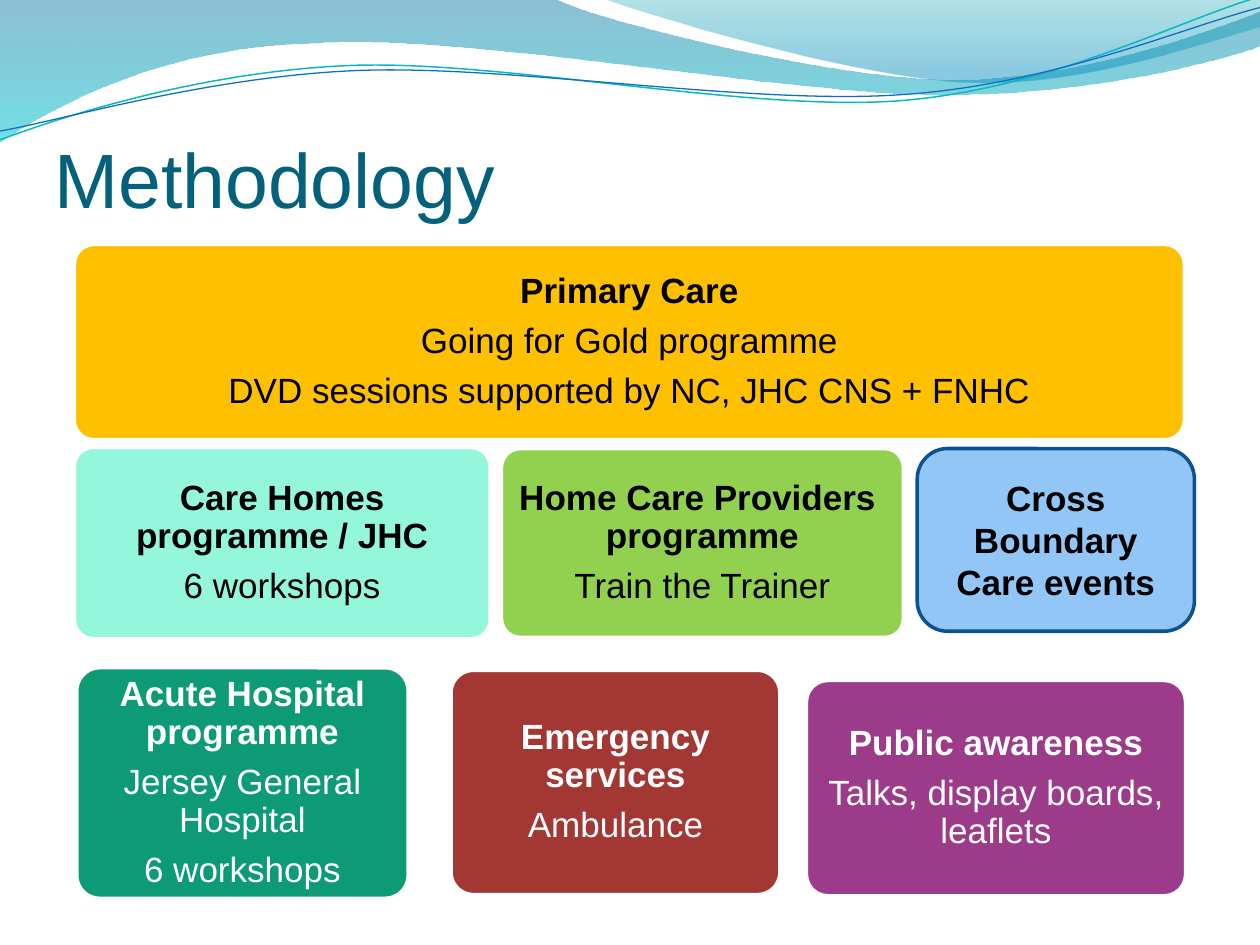
from math import cos, radians, sin

from lxml import etree
from pptx import Presentation
from pptx.dml.color import RGBColor
from pptx.enum.shapes import MSO_SHAPE
from pptx.enum.text import MSO_ANCHOR, PP_ALIGN
from pptx.oxml.ns import qn
from pptx.util import Inches, Pt

ROUNDED = MSO_SHAPE.ROUNDED_RECTANGLE
MIDDLE, BOTTOM = MSO_ANCHOR.MIDDLE, MSO_ANCHOR.BOTTOM
LEFT, CENTER = PP_ALIGN.LEFT, PP_ALIGN.CENTER

BLACK = RGBColor(0x00, 0x00, 0x00)
WHITE = RGBColor(0xFF, 0xFF, 0xFF)
TITLE_TEAL = RGBColor(0x04, 0x61, 0x7B)
GOLD = RGBColor(0xFF, 0xC0, 0x00)
MINT = RGBColor(0x94, 0xF7, 0xDC)
LIME = RGBColor(0x92, 0xD0, 0x50)
GREEN = RGBColor(0x0C, 0x9B, 0x74)
RED = RGBColor(0xA2, 0x37, 0x34)
PURPLE = RGBColor(0x9B, 0x3B, 0x89)
SKY = RGBColor(0x91, 0xC6, 0xF7)
NAVY = RGBColor(0x0B, 0x52, 0x92)
DEEP_BLUE = RGBColor(0x00, 0x74, 0xA1)
CYAN = RGBColor(0x00, 0xC6, 0xCF)
SEA_GREEN = RGBColor(0x00, 0xA1, 0xA9)
OCEAN = RGBColor(0x00, 0x8B, 0xBF)
LINE_CYAN = RGBColor(0x0A, 0xB8, 0xBF)
LINE_BLUE = RGBColor(0x0F, 0x6F, 0xC6)

BANDS = [
    ((0, 0), [
        [(4.4, -0.01)],
        [(4.76, 0.17), (6.64, 0.63), (7.58, 0.63)],
        [(8.53, 0.63), (9.58, 0.26), (10, 0.09)],
        [(10.01, 0.36)],
        [(9.83, 0.44), (8.7, 0.76), (7.46, 0.75)],
        [(6.22, 0.75), (3.82, 0.28), (2.57, 0.34)],
        [(1.29, 0.36), (0.46, 0.83), (-0.01, 1.13)],
    ], [(0, DEEP_BLUE, 45), (1, CYAN, 55)]),
    ((4.79, -0.01), [
        [(5.09, 0.11), (6.82, 0.62), (7.69, 0.65)],
        [(8.56, 0.69), (9.61, 0.32), (10, 0.21)],
        [(10, 0)],
    ], [(0, SEA_GREEN, 30), (0.8, OCEAN, 45)]),
]
WAVES = [
    ((0, 1.11), [
        [(0.48, 0.93), (1.58, 0.57), (2.77, 0.52)],
        [(3.95, 0.47), (5.93, 0.89), (7.13, 0.8)],
        [(8.33, 0.71), (9.38, 0.15), (9.98, -0.02)],
    ], LINE_CYAN, 0.85),
    ((0, 1.04), [
        [(0.47, 0.96), (1.64, 0.61), (2.83, 0.56)],
        [(4.03, 0.51), (5.97, 0.84), (7.17, 0.75)],
        [(8.36, 0.67), (9.41, 0.21), (10, 0.06)],
    ], LINE_BLUE, 0.75),
]
WAVE_TILT = -2.7
WAVE_CENTER = (4.99, 0.58)
PROGRAMMES = [
    ((0.59, 1.94, 8.81, 1.55), GOLD, BLACK,
     ["Primary Care", "Going for Gold programme",
      "DVD sessions supported by NC, JHC CNS + FNHC"]),
    ((0.59, 3.55, 3.3, 1.52), MINT, BLACK,
     ["Care Homes programme / JHC", "6 workshops"]),
    ((0.61, 5.3, 2.63, 1.83), GREEN, WHITE,
     ["Acute Hospital programme", "Jersey General Hospital", "6 workshops"]),
    ((3.58, 5.32, 2.61, 1.78), RED, WHITE,
     ["Emergency services", "Ambulance"]),
    ((3.98, 3.56, 3.19, 1.5), LIME, BLACK,
     ["Home Care Providers  programme", "Train the Trainer"]),
    ((6.4, 5.4, 3.01, 1.71), PURPLE, WHITE,
     ["Public awareness", "Talks, display boards, leaflets"]),
]


def turn(point, center, degrees):
    angle = radians(degrees)
    dx, dy = point[0] - center[0], point[1] - center[1]
    return (center[0] + dx * cos(angle) - dy * sin(angle),
            center[1] + dx * sin(angle) + dy * cos(angle))


def add_outline(page, start, segments, closed):
    corners = [start, *(point for segment in segments for point in segment)]
    points = [(Inches(x), Inches(y)) for x, y in corners]
    builder = page.shapes.build_freeform(*points[0])
    builder.add_line_segments(points[1:], close=closed)
    outline = builder.convert_to_shape()
    outline.shadow.inherit = False
    steps = iter(list(outline._element.iter(qn("a:lnTo"))))
    for segment in segments:
        first, *others = [next(steps) for _ in segment]
        if others:
            first.addprevious(curve := etree.Element(qn("a:cubicBezTo")))
            for step in (first, *others):
                curve.append(step[0])
                step.getparent().remove(step)
    return outline


def add_band(page, start, segments, stops):
    band = add_outline(page, start, segments, True)
    band.line.fill.background()
    band.fill.gradient()
    band.fill.gradient_angle = 270
    for stop, (position, color, _) in zip(band.fill.gradient_stops, stops):
        stop.position = position
        stop.color.rgb = color
    for node, (_, _, opacity) in zip(band._element.spPr.iter(qn("a:srgbClr")), stops):
        etree.SubElement(node, qn("a:alpha"), val=str(opacity * 1000))


def add_wave(page, start, segments, color, width):
    level = [[turn(point, WAVE_CENTER, -WAVE_TILT) for point in segment]
             for segment in segments]
    wave = add_outline(page, turn(start, WAVE_CENTER, -WAVE_TILT), level, False)
    wave.rotation = WAVE_TILT
    wave.fill.background()
    wave.line.color.rgb = color
    wave.line.width = Pt(width)


def write(box, lines, *, size=20, color=BLACK, bold_first=True, align=CENTER,
          anchor=MIDDLE, insets=(0.08,) * 4, line_spacing=None, space_after=0):
    frame = box.text_frame
    frame.word_wrap = True
    frame.vertical_anchor = anchor
    (frame.margin_left, frame.margin_top,
     frame.margin_right, frame.margin_bottom) = map(Inches, insets)
    for index, line in enumerate(lines):
        para = frame.add_paragraph() if index else frame.paragraphs[0]
        para.alignment = align
        para.line_spacing = line_spacing
        para.space_after = Pt(space_after)
        span = para.add_run()
        span.text = line
        span.font.name = "Arial"
        span.font.size = Pt(size)
        span.font.bold = bold_first and index == 0
        span.font.color.rgb = color


def add_card(page, place, fill, line):
    card = page.shapes.add_shape(ROUNDED, *map(Inches, place))
    card.shadow.inherit = False
    card.fill.solid()
    card.fill.fore_color.rgb = fill
    card.line.color.rgb = line
    card.line.width = Pt(2)
    return card


def main():
    deck = Presentation()
    deck.slide_width, deck.slide_height = Inches(10), Inches(7.5)
    page = deck.slides.add_slide(deck.slide_layouts[6])

    for band in BANDS:
        add_band(page, *band)
    for wave in WAVES:
        add_wave(page, *wave)

    title = page.shapes.add_textbox(*map(Inches, (0.43, 0.77, 9.15, 1.01)))
    write(title, ["Methodology"], size=44, color=TITLE_TEAL, bold_first=False,
          align=LEFT, anchor=BOTTOM, insets=(0, 0.05, 0, 0))

    for place, fill, ink, lines in PROGRAMMES:
        card = add_card(page, place, fill, WHITE)
        card.adjustments[0] = 0.1
        write(card, lines, color=ink, line_spacing=0.9, space_after=7)

    events = add_card(page, (7.28, 3.56, 2.2, 1.45), SKY, NAVY)
    write(events, ["Cross Boundary Care events"], insets=(0.1, 0.05, 0.1, 0.05))

    deck.save("out.pptx")


if __name__ == "__main__":
    main()
